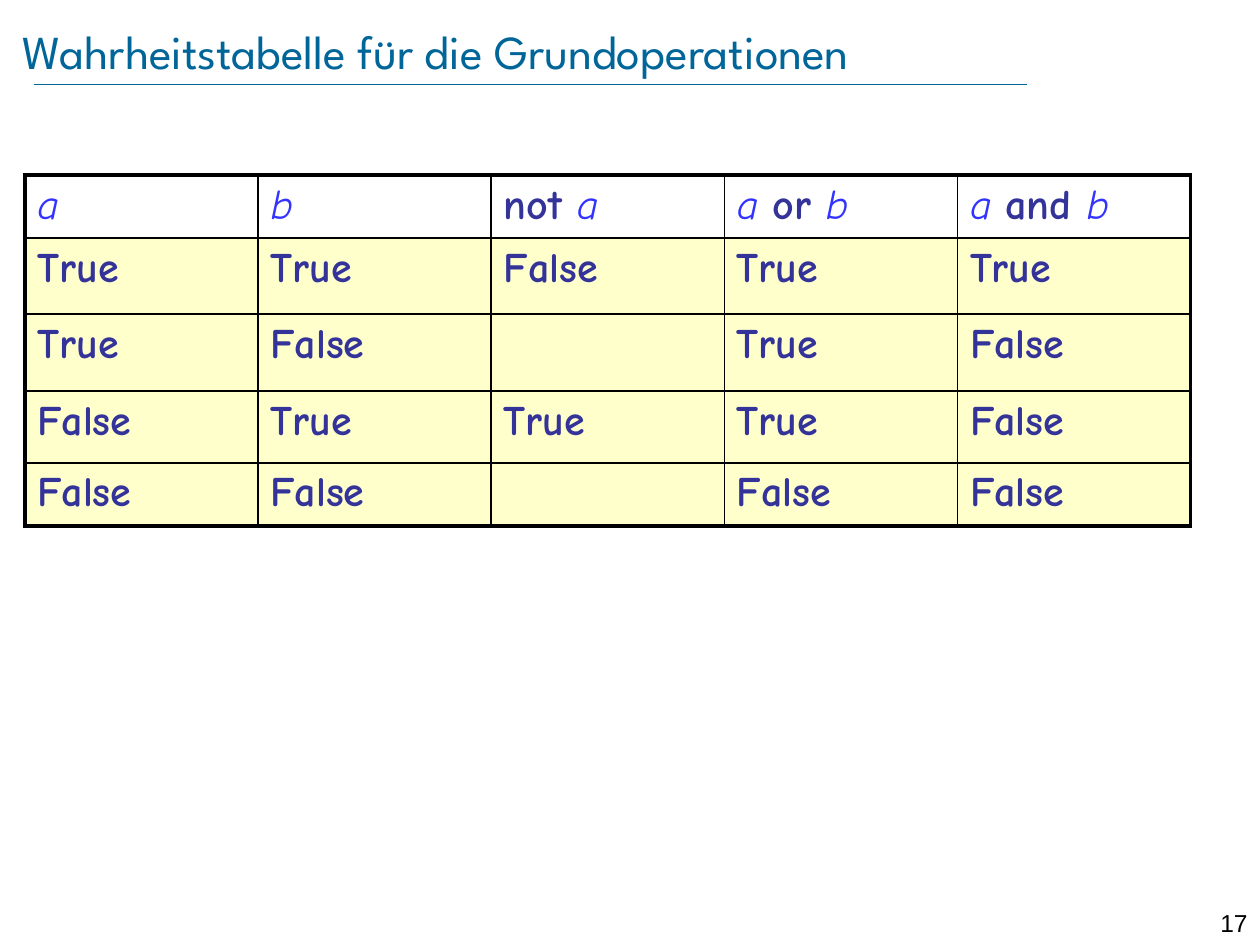
"""Build a slide with the truth table of the basic logical operations."""
from lxml.etree import SubElement
from pptx import Presentation
from pptx.dml.color import RGBColor
from pptx.enum.shapes import MSO_CONNECTOR
from pptx.enum.text import MSO_ANCHOR, PP_ALIGN
from pptx.oxml.ns import qn
from pptx.util import Cm, Pt

TITLE = "Wahrheitstabelle für die Grundoperationen"
PAGE = "17"
VARIABLES = ("a", "b")
HEADER = [["a"], ["b"], ["not ", "a"], ["a ", "or ", "b"], ["a ", "and ", "b"]]
VALUES = [
    ["True", "True", "False", "True", "True"],
    ["True", "False", "", "True", "False"],
    ["False", "True", "True", "True", "False"],
    ["False", "False", "", "False", "False"],
]
ROW_HEIGHTS = [1.21, 1.53, 1.55, 1.45, 1.23]
COL_WIDTH = 4.7
TEAL, BLUE, NAVY, CREAM, BLACK = "006699", "3333FF", "333399", "FFFFCC", "000000"


def rgb(value):
    return RGBColor.from_string(value)


def add_run(p, text, font, size, color, bold=False, italic=False):
    r = p.add_run()
    r.text = text
    r.font.name, r.font.size = font, Pt(size)
    r.font.bold, r.font.italic = bold, italic
    r.font.color.rgb = rgb(color)


def add_text(s, box, text, font, size, color, align, anchor, inset):
    sp = s.shapes.add_textbox(*map(Cm, box))
    tf = sp.text_frame
    tf.word_wrap = True
    tf.vertical_anchor = anchor
    if not inset:
        tf.margin_left = tf.margin_right = tf.margin_top = tf.margin_bottom = 0
    tf.paragraphs[0].alignment = align
    add_run(tf.paragraphs[0], text, font, size, color)


def set_borders(cell, outer):
    tc_pr = cell._tc.get_or_add_tcPr()
    for side in "LRTB":
        width = Pt(2.25 if outer[side] else 1)
        ln = SubElement(tc_pr, qn(f"a:ln{side}"), w=str(width))
        fill = SubElement(ln, qn("a:solidFill"))
        SubElement(fill, qn("a:srgbClr"), val=BLACK)


def add_truth_table(s):
    rows = [HEADER] + [[[v] if v else [] for v in row] for row in VALUES]
    n_rows, n_cols = len(rows), len(HEADER)
    frame = s.shapes.add_table(n_rows, n_cols, Cm(0.5), Cm(3.53),
                               Cm(COL_WIDTH * n_cols), Cm(sum(ROW_HEIGHTS)))
    table = frame.table
    table.first_row = table.horz_banding = False
    for col in table.columns:
        col.width = Cm(COL_WIDTH)
    for i, (row, height) in enumerate(zip(rows, ROW_HEIGHTS)):
        table.rows[i].height = Cm(height)
        for j, parts in enumerate(row):
            cell = table.cell(i, j)
            set_borders(cell, {"L": j == 0, "R": j == n_cols - 1,
                               "T": i == 0, "B": i == n_rows - 1})
            if i:
                cell.fill.solid()
                cell.fill.fore_color.rgb = rgb(CREAM)
            else:
                cell.fill.background()
            for part in parts:
                var = part.strip() in VARIABLES
                add_run(cell.text_frame.paragraphs[0], part, "Comic Neue", 24,
                        BLUE if var else NAVY, bold=not var, italic=var)


def main():
    prs = Presentation()
    prs.slide_width, prs.slide_height = Cm(25.4), Cm(19.05)
    s = prs.slides.add_slide(prs.slide_layouts[6])
    rule = s.shapes.add_connector(MSO_CONNECTOR.STRAIGHT,
                                  Cm(0.69), Cm(1.7), Cm(20.7), Cm(1.7))
    rule.line.color.rgb = rgb(TEAL)
    rule.line.width = Pt(0.25)
    SubElement(rule._element.spPr, qn("a:effectLst"))
    add_text(s, (24, 18.19, 1.4, 0.61), PAGE, "Arial", 14, BLACK,
             PP_ALIGN.RIGHT, MSO_ANCHOR.TOP, True)
    add_text(s, (0.46, 0.46, 24.94, 1.14), TITLE, "League Spartan", 27, TEAL,
             PP_ALIGN.LEFT, MSO_ANCHOR.MIDDLE, False)
    add_truth_table(s)
    prs.save("out.pptx")


if __name__ == "__main__":
    main()
